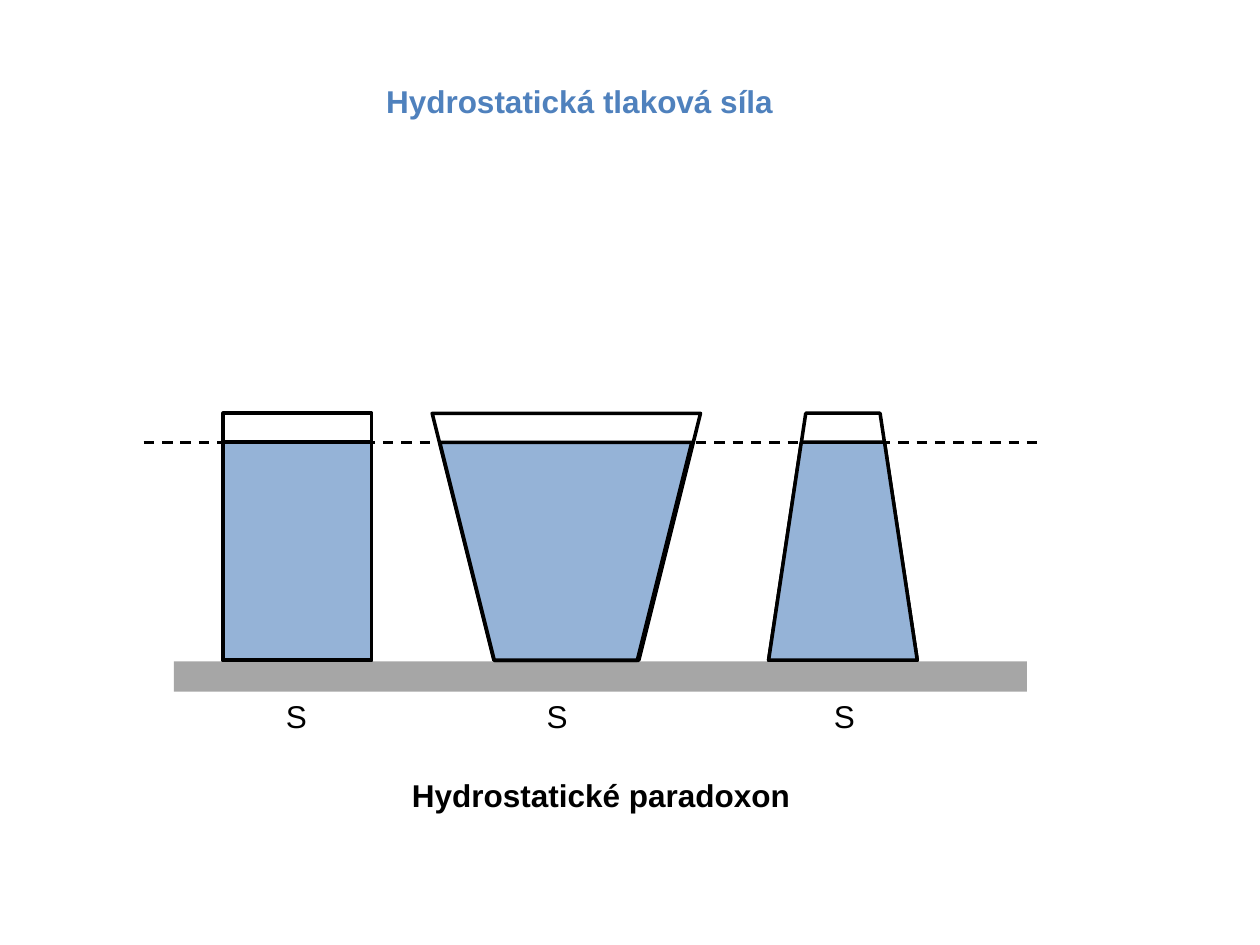
from lxml import etree
from pptx import Presentation
from pptx.dml.color import RGBColor
from pptx.enum.dml import MSO_LINE
from pptx.enum.shapes import MSO_CONNECTOR, MSO_SHAPE
from pptx.enum.text import MSO_AUTO_SIZE, PP_ALIGN
from pptx.oxml.ns import qn
from pptx.util import Inches, Pt

RECT, TRAP = MSO_SHAPE.RECTANGLE, MSO_SHAPE.TRAPEZOID
STRAIGHT, DASH = MSO_CONNECTOR.STRAIGHT, MSO_LINE.DASH
LEFT, CENTER = PP_ALIGN.LEFT, PP_ALIGN.CENTER
FIT = MSO_AUTO_SIZE.SHAPE_TO_FIT_TEXT

THEME = {
    "font": "Arial", "size": 18, "title": "4F81BD", "ink": "000000",
    "water": "95B3D7", "ground": "A6A6A6", "wall": 2, "dash": 1.5,
}

# text, left, top, width, colour, bold, alignment
HEADS = [
    ("Hydrostatická tlaková síla", 2.7, 0.6, 3.8, "title", True, CENTER),
    ("Hydrostatické paradoxon", 2.87, 6.11, 3.8, "ink", True, CENTER),
]
LABELS = [("S", left, 5.48, 0.37, "ink", False, LEFT)
          for left in (2.17, 4.24, 6.52)]

RIM, LEVEL, FLOOR = 3.28, 3.51, 5.24
GROUND = (1.38, 5.25, 6.77, 0.24)
SURFACE = (1.14, 8.23)

# shape, rotation, then (left, width, slant) of the vessel and of its water
VESSELS = [
    (RECT, 0, (1.77, 1.18, None), (1.77, 1.18, None)),
    (TRAP, 180, (3.43, 2.13, 0.25), (3.49, 2, 0.25)),
    (TRAP, 0, (6.1, 1.18, 0.25), (6.1, 1.18, 0.22)),
]


def color(name):
    return RGBColor.from_string(THEME[name])


def add_block(slide, kind, box, fill=None, line=None):
    shape = slide.shapes.add_shape(kind, *map(Inches, box))
    shape.shadow.inherit = False
    if fill:
        shape.fill.solid()
        shape.fill.fore_color.rgb = color(fill)
    else:
        shape.fill.background()
    if line:
        shape.line.color.rgb = color(line)
        shape.line.width = Pt(THEME["wall"])
    else:
        shape.line.fill.background()
    return shape


def add_vessel(slide, kind, turn, glass, water):
    for part, top, fill in ((glass, RIM, None), (water, LEVEL, "water")):
        left, width, slant = part
        box = (left, top, width, FLOOR - top)
        shape = add_block(slide, kind, box, fill, "ink")
        shape.rotation = turn
        if slant:
            shape.adjustments[0] = slant


def add_surface(slide):
    start, end = map(Inches, SURFACE)
    level = Inches(LEVEL)
    line = slide.shapes.add_connector(STRAIGHT, start, level, end, level)
    etree.SubElement(line._element.spPr, qn("a:effectLst"))
    line.line.color.rgb = color("ink")
    line.line.width = Pt(THEME["dash"])
    line.line.dash_style = DASH


def add_text(slide, text, left, top, width, tone, bold, align):
    box = slide.shapes.add_textbox(*map(Inches, (left, top, width, 0.4)))
    frame = box.text_frame
    frame.word_wrap = align == CENTER
    frame.auto_size = FIT
    para = frame.paragraphs[0]
    para.alignment = align
    run = para.add_run()
    run.text = text
    style = {"name": THEME["font"], "size": Pt(THEME["size"]), "bold": bold}
    for key, value in style.items():
        setattr(run.font, key, value)
    run.font.color.rgb = color(tone)


def main():
    deck = Presentation()
    deck.slide_width, deck.slide_height = Inches(10), Inches(7.5)
    slide = deck.slides.add_slide(deck.slide_layouts[6])
    add_block(slide, RECT, GROUND, "ground")
    for vessel in VESSELS:
        add_vessel(slide, *vessel)
    add_surface(slide)
    for item in HEADS + LABELS:
        add_text(slide, *item)
    deck.save("out.pptx")


if __name__ == "__main__":
    main()
